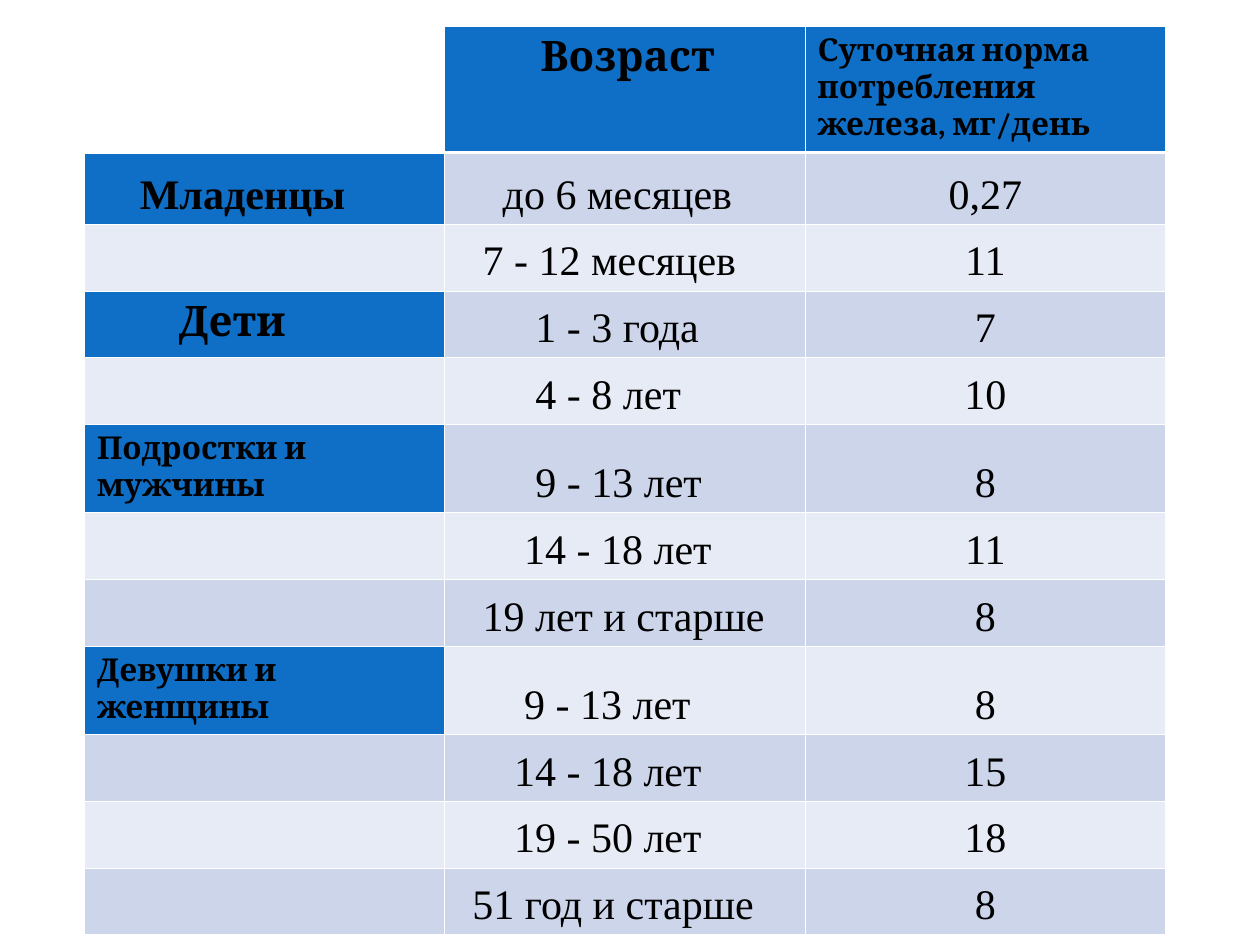
from lxml.etree import SubElement
from pptx import Presentation
from pptx.dml.color import RGBColor
from pptx.enum.text import MSO_ANCHOR, PP_ALIGN
from pptx.oxml.ns import qn
from pptx.util import Inches, Pt

COLORS = {"heading": "0F6FC6", "odd": "CCD5EA", "even": "E7EBF5",
          "text": "000000", "border": "FFFFFF"}

AGE_HEADING = "Возраст"
NORM_HEADING = "Суточная норма потребления железа, мг/день"

GROUPS = {
    0: {"text": "Младенцы", "size": 24, "left": 0.44, "font": "Times New Roman",
        "anchor": MSO_ANCHOR.BOTTOM, "spacing": 0.95, "after": 10},
    2: {"text": "Дети", "size": 24, "left": 0.75},
    4: {"text": "Подростки и мужчины", "size": 18},
    7: {"text": "Девушки и женщины", "size": 18},
}

NORMS = [
    ("до 6 месяцев", "0,27", 0.46),
    ("7 - 12 месяцев", "11", 0.3),
    ("1 - 3 года", "7", 0.72),
    ("4 - 8 лет", "10", 0.72),
    ("9 - 13 лет", "8", 0.72),
    ("14 - 18 лет", "11", 0.63),
    ("19 лет и старше", "8", 0.3),
    ("9 - 13 лет", "8", 0.63),
    ("14 - 18 лет", "15", 0.55),
    ("19 - 50 лет", "18", 0.55),
    ("51 год и старше", "8", 0.22),
]

COLUMN_WIDTH = 2.86
HEADER_HEIGHT, FIRST_HEIGHT, TALL_HEIGHT, ROW_HEIGHT = 1, 0.57, 0.7, 0.53
TALL_ROWS = (4, 7)
VALUE_FORMAT = {"size": 24, "font": "Times New Roman", "bold": False, "right": 0.05,
                "anchor": MSO_ANCHOR.BOTTOM, "spacing": 0.95, "after": 10}


def write(cell, text, size=18, font="Cambria", bold=True, left=0.1, right=0.1,
          anchor=MSO_ANCHOR.TOP, align=PP_ALIGN.LEFT, spacing=1.02, after=0):
    cell.margin_left, cell.margin_right = Inches(left), Inches(right)
    cell.margin_top = cell.margin_bottom = Inches(0.05)
    cell.vertical_anchor = anchor
    paragraph = cell.text_frame.paragraphs[0]
    paragraph.alignment = align
    paragraph.line_spacing = spacing
    paragraph.space_after = Pt(after)
    run = paragraph.add_run()
    run.text = text
    run.font.size, run.font.name, run.font.bold = Pt(size), font, bold
    run.font.color.rgb = RGBColor.from_string(COLORS["text"])


def draw_borders(cell, top=0.45, bottom=0.45):
    properties = cell._tc.get_or_add_tcPr()
    for side, width in (("L", 0.45), ("R", 0.45), ("T", top), ("B", bottom)):
        line = SubElement(properties, qn(f"a:ln{side}"), w=str(Pt(width)))
        fill = SubElement(line, qn("a:solidFill"))
        SubElement(fill, qn("a:srgbClr"), val=COLORS["border"])


def paint(cell, color):
    cell.fill.solid()
    cell.fill.fore_color.rgb = RGBColor.from_string(COLORS[color])


def main():
    presentation = Presentation()
    presentation.slide_width, presentation.slide_height = Inches(10), Inches(7.5)
    slide = presentation.slides.add_slide(presentation.slide_layouts[6])

    heights = [HEADER_HEIGHT, FIRST_HEIGHT] + [
        TALL_HEIGHT if index in TALL_ROWS else ROW_HEIGHT
        for index in range(1, len(NORMS))]
    table = slide.shapes.add_table(
        len(heights), 3, Inches(0.67), Inches(0.21),
        Inches(3 * COLUMN_WIDTH), Inches(sum(heights))).table
    for column in table.columns:
        column.width = Inches(COLUMN_WIDTH)

    for index, height in enumerate(heights):
        table.rows[index].height = Inches(height)
        for cell in table.rows[index].cells:
            draw_borders(cell, top=1.47 if index == 1 else 0.45,
                         bottom=1.47 if index == 0 else 0.45)
            paint(cell, "odd" if index % 2 else "even")

    table.cell(0, 0).fill.background()
    age_heading, norm_heading = table.cell(0, 1), table.cell(0, 2)
    write(age_heading, AGE_HEADING, size=24, left=0.76)
    write(norm_heading, NORM_HEADING)
    for heading in (age_heading, norm_heading):
        paint(heading, "heading")

    for index, group in GROUPS.items():
        group_cell = table.cell(index + 1, 0)
        write(group_cell, **group)
        paint(group_cell, "heading")

    for row, (age, norm, indent) in enumerate(NORMS, start=1):
        write(table.cell(row, 1), age, left=indent, **VALUE_FORMAT)
        write(table.cell(row, 2), norm, left=0.05, align=PP_ALIGN.CENTER, **VALUE_FORMAT)

    presentation.save("out.pptx")


if __name__ == "__main__":
    main()
